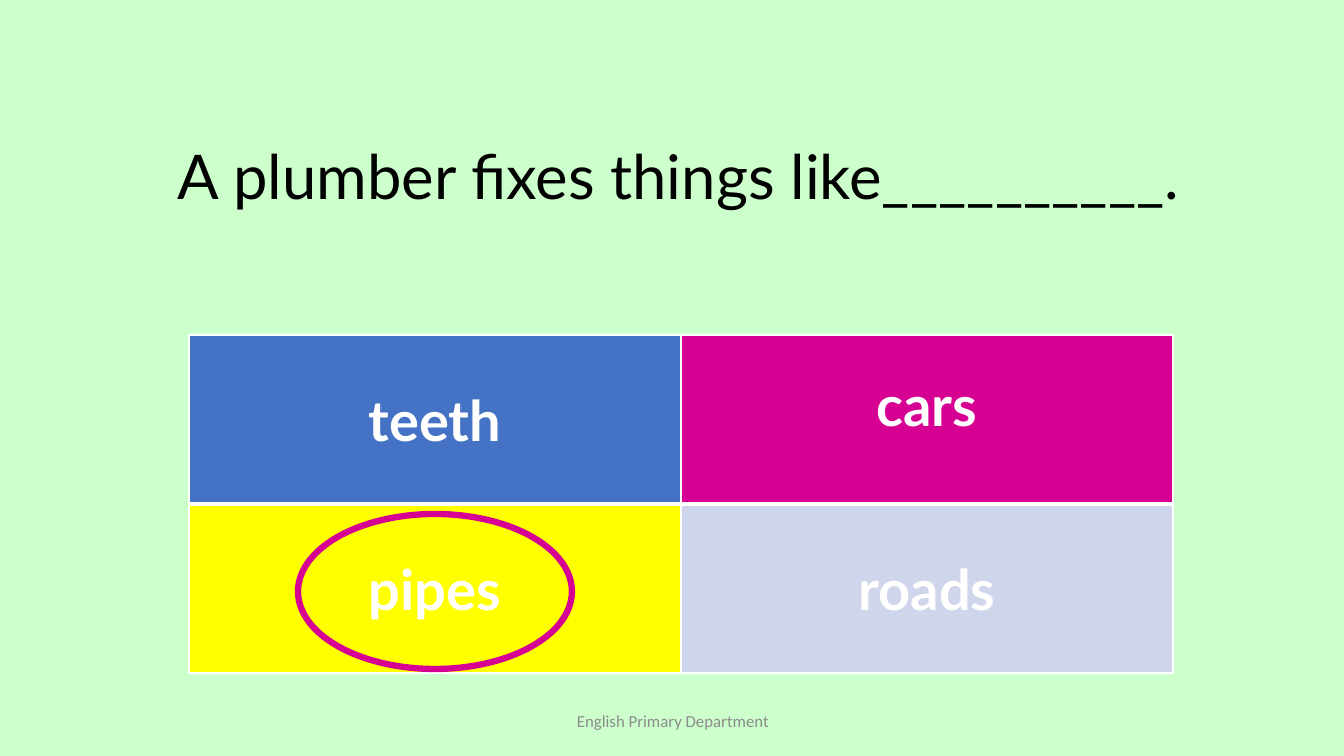
from lxml.etree import SubElement
from pptx import Presentation
from pptx.dml.color import RGBColor
from pptx.enum.shapes import MSO_SHAPE
from pptx.enum.text import MSO_ANCHOR, PP_ALIGN
from pptx.oxml.ns import qn
from pptx.util import Emu, Pt

WHITE = "FFFFFF"
PINK = "D60093"
ANSWERS = [
    [("teeth", "4472C4"), ("cars", PINK)],
    [("pipes", "FFFF00"), ("roads", "CFD5EA")],
]


def px(count):
    return Emu(round(count * 914400 / 100.8))


def color(code):
    return RGBColor.from_string(code)


def style(frame, size, font, code, bold=False):
    """Centre the text of a frame and format its runs."""
    for line in frame.paragraphs:
        line.alignment = PP_ALIGN.CENTER
        for run in line.runs:
            run.font.size = Pt(size)
            run.font.name = font
            run.font.bold = bold
            run.font.color.rgb = color(code)


def label(slide, text, place, size, font, code, anchor):
    frame = slide.shapes.add_textbox(*map(px, place)).text_frame
    frame.word_wrap = True
    frame.vertical_anchor = anchor
    frame.text = text
    style(frame, size, font, code)


def border(cell, widths):
    """Draw white cell edges; widths are points for left, right, top, bottom."""
    props = cell._tc.get_or_add_tcPr()
    for side, width in zip("LRTB", widths):
        edge = SubElement(props, qn(f"a:ln{side}"), w=str(Pt(width)))
        fill = SubElement(edge, qn("a:solidFill"))
        SubElement(fill, qn("a:srgbClr"), val=WHITE)


def grid(slide, answers, left, top, width, height):
    """Add the answer table with equal columns and rows."""
    rows, cols = len(answers), len(answers[0])
    frame = slide.shapes.add_table(rows, cols, *map(px, (left, top, width, height)))
    table = frame.table
    for r, row in enumerate(answers):
        for c, (word, back) in enumerate(row):
            cell = table.cell(r, c)
            border(cell, (1, 1, 3 if r else 1, 1 if r else 3))
            cell.fill.solid()
            cell.fill.fore_color.rgb = color(back)
            cell.vertical_anchor = MSO_ANCHOR.MIDDLE
            cell.text_frame.text = word
            style(cell.text_frame, 40, "Lato", WHITE, True)
    return table


def ring(slide, left, top, width, height):
    """Circle the right answer."""
    oval = slide.shapes.add_shape(MSO_SHAPE.OVAL, *map(px, (left, top, width, height)))
    oval.shadow.inherit = False
    oval.fill.background()
    oval.line.color.rgb = color(PINK)
    oval.line.width = Pt(4.5)


def main():
    deck = Presentation()
    deck.slide_width, deck.slide_height = px(1344), px(756)
    slide = deck.slides.add_slide(deck.slide_layouts[6])
    slide.background.fill.solid()
    slide.background.fill.fore_color.rgb = color("CCFFCC")

    label(slide, "A plumber fixes things like__________.", (-12, 133, 1382, 85),
          44, "Lato", "000000", MSO_ANCHOR.TOP)
    table = grid(slide, ANSWERS, 189, 335, 984, 338)
    table.cell(0, 1).margin_bottom = px(34)
    ring(slide, 298, 514, 274, 155)
    label(slide, "English Primary Department", (446, 701, 454, 40),
          12, "Calibri", "8C8C8C", MSO_ANCHOR.MIDDLE)
    deck.save("out.pptx")


if __name__ == "__main__":
    main()
